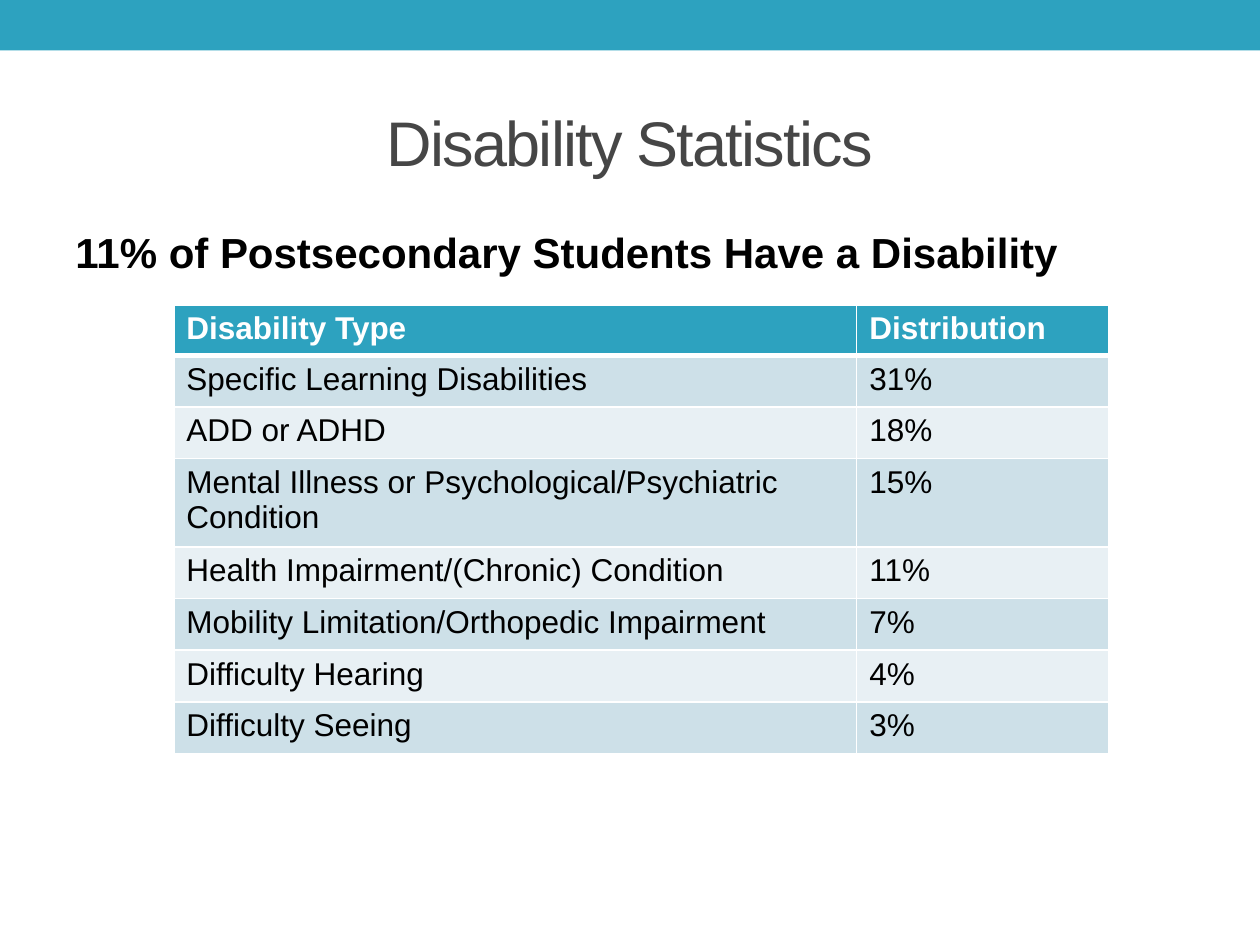
from typing import NamedTuple

from lxml import etree
from pptx import Presentation
from pptx.dml.color import RGBColor
from pptx.enum.shapes import MSO_SHAPE as Shape
from pptx.enum.text import MSO_ANCHOR as Anchor, PP_ALIGN as Align
from pptx.oxml.ns import qn
from pptx.util import Inches, Pt

FONT = "Arial"
TEAL, WHITE, BLACK, GRAY = "2DA2BF", "FFFFFF", "000000", "464646"
BANDS = ("CDE0E8", "E8F0F4")
COLUMN_WIDTHS = (5.42, 2)
HEADER_HEIGHT, ROW_HEIGHT = 0.16, 0.41


class Category(NamedTuple):
    disability: str
    share: str


HEADER = Category("Disability Type", "Distribution")
CATEGORIES = (
    Category("Specific Learning Disabilities", "31%"),
    Category("ADD or ADHD", "18%"),
    Category("Mental Illness or Psychological/Psychiatric Condition", "15%"),
    Category("Health Impairment/(Chronic) Condition", "11%"),
    Category("Mobility Limitation/Orthopedic Impairment", "7%"),
    Category("Difficulty Hearing", "4%"),
    Category("Difficulty Seeing", "3%"),
)


def rgb(value: str) -> RGBColor:
    return RGBColor.from_string(value)


def style_font(paragraph, size: float, color: str, bold: bool = False) -> None:
    font = paragraph.font
    font.name, font.size, font.bold = FONT, Pt(size), bold
    font.color.rgb = rgb(color)


def add_text(slide, text: str, top: float, height: float, size: float,
             color: str, bold: bool = False):
    """Add a full-width line of text and return its text frame."""
    box = slide.shapes.add_textbox(Inches(0.5), Inches(top), Inches(9), Inches(height))
    frame = box.text_frame
    frame.word_wrap = True
    paragraph = frame.paragraphs[0]
    paragraph.text = text
    style_font(paragraph, size, color, bold)
    return frame


def set_borders(cell, top: float, bottom: float) -> None:
    """Give a cell white borders; the side borders are 1 pt wide."""
    properties = cell._tc.get_or_add_tcPr()
    widths = {"lnL": 1, "lnR": 1, "lnT": top, "lnB": bottom}
    for position, (side, width) in enumerate(widths.items()):
        line = etree.Element(qn(f"a:{side}"), w=str(Pt(width)))
        fill = etree.SubElement(line, qn("a:solidFill"))
        etree.SubElement(fill, qn("a:srgbClr"), val=WHITE)
        properties.insert(position, line)


def add_category_table(slide) -> None:
    rows = (HEADER, *CATEGORIES)
    height = HEADER_HEIGHT + ROW_HEIGHT * len(CATEGORIES)
    table = slide.shapes.add_table(
        len(rows), len(COLUMN_WIDTHS), Inches(1.38), Inches(2.42),
        Inches(sum(COLUMN_WIDTHS)), Inches(height)).table
    table.horz_banding = False
    for column, width in zip(table.columns, COLUMN_WIDTHS):
        column.width = Inches(width)
    for index, category in enumerate(rows):
        is_header = index == 0
        table.rows[index].height = Inches(HEADER_HEIGHT if is_header else ROW_HEIGHT)
        for column_index, text in enumerate(category):
            cell = table.cell(index, column_index)
            cell.text = text
            style_font(cell.text_frame.paragraphs[0], 18,
                       WHITE if is_header else BLACK, is_header)
            cell.fill.solid()
            cell.fill.fore_color.rgb = rgb(TEAL if is_header else BANDS[(index - 1) % 2])
            set_borders(cell, top=3 if index == 1 else 1, bottom=3 if is_header else 1)


def main() -> None:
    presentation = Presentation()
    presentation.slide_width, presentation.slide_height = Inches(10), Inches(7.5)
    slide = presentation.slides.add_slide(presentation.slide_layouts[6])

    banner = slide.shapes.add_shape(Shape.RECTANGLE, 0, 0, Inches(10), Inches(0.4))
    banner.shadow.inherit = False
    banner.fill.solid()
    banner.fill.fore_color.rgb = rgb(TEAL)
    banner.line.fill.background()

    title = add_text(slide, "Disability Statistics", 0.58, 1.08, 36, GRAY)
    title.vertical_anchor = Anchor.MIDDLE
    title.paragraphs[0].alignment = Align.CENTER
    title.paragraphs[0].runs[0].font._element.set("spc", "-100")

    subtitle = add_text(slide, "11% of Postsecondary Students Have a Disability",
                        1.75, 4.58, 24, BLACK, bold=True)
    subtitle.paragraphs[0].space_before = Pt(2.4)

    add_category_table(slide)
    presentation.save("out.pptx")


if __name__ == "__main__":
    main()
